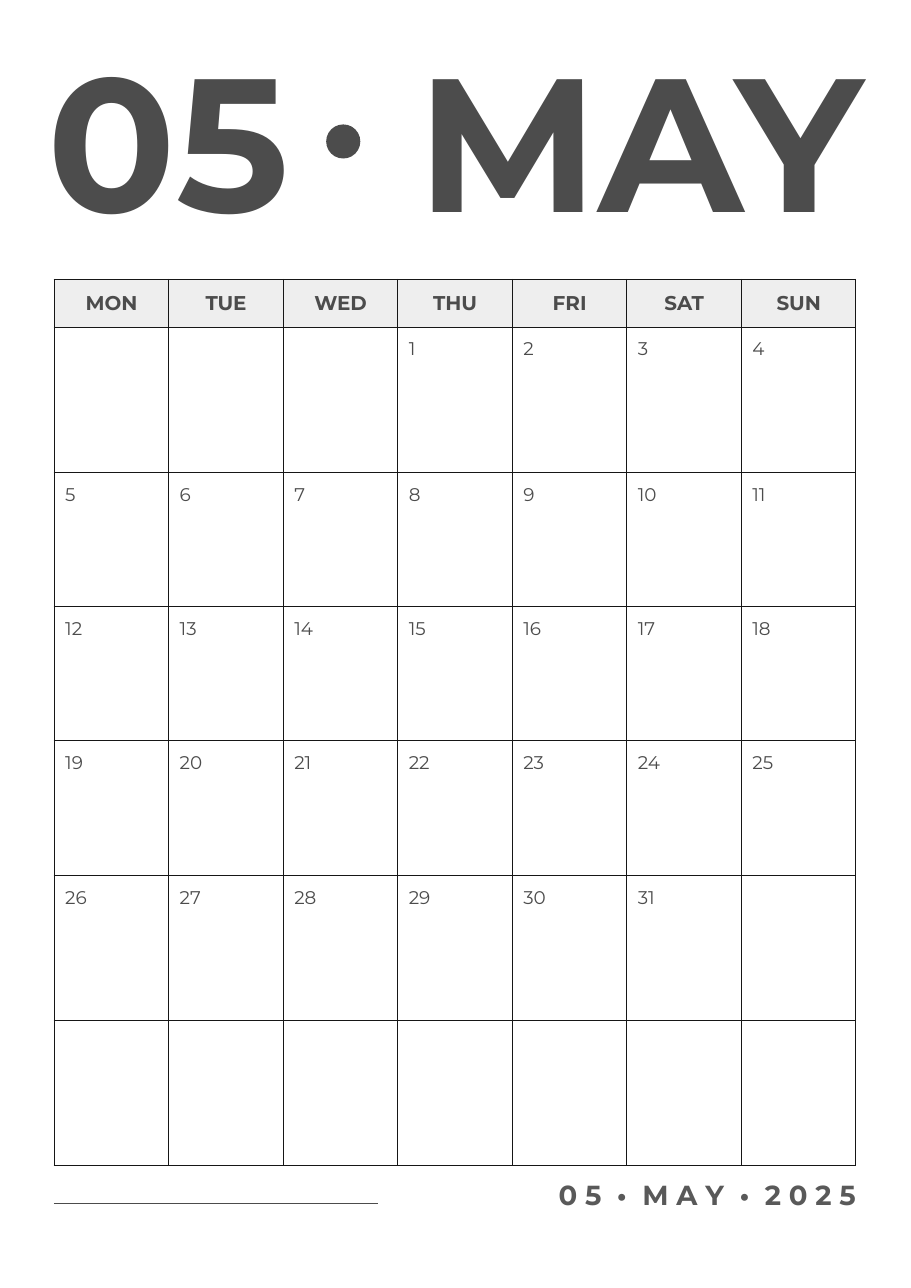
from lxml import etree
from pptx import Presentation
from pptx.dml.color import RGBColor
from pptx.enum import shapes, text
from pptx.oxml.ns import qn
from pptx.util import Pt

COLORS = {"ink": "4C4C4C", "stamp": "595959", "header": "EEEEEE", "paper": "FFFFFF", "grid": "161616"}
FONT = "Montserrat"
WEEKDAYS = ["MON", "TUE", "WED", "THU", "FRI", "SAT", "SUN"]
FIRST_COLUMN, DAY_COUNT, WEEK_COUNT = 3, 31, 6
HEADER_HEIGHT, DAY_HEIGHT, OPEN_DAY_HEIGHT, NOTE_HEIGHT = 31.3, 29.4, 34.2, 58.4
PADDING = 7.2


def color(name):
    """Return the named palette colour."""
    return RGBColor.from_string(COLORS[name])


def write(frame, words, size, bold=False, ink="ink", align=text.PP_ALIGN.LEFT):
    """Write one formatted paragraph into a text frame."""
    para = frame.paragraphs[0]
    para.alignment = align
    span = para.add_run()
    span.text = words
    span.font.name = FONT
    span.font.size = Pt(size)
    span.font.bold = bold
    span.font.color.rgb = color(ink)


def add_text(page, box, words, size, **style):
    """Add a text box without margins."""
    frame = page.shapes.add_textbox(*map(Pt, box)).text_frame
    frame.word_wrap = True
    frame.margin_left = frame.margin_top = frame.margin_right = frame.margin_bottom = 0
    write(frame, words, size, **style)


def set_borders(cell, sides):
    """Draw the listed cell sides and hide the others."""
    props = cell._tc.get_or_add_tcPr()
    for position, side in enumerate("LRTB"):
        line = etree.Element(qn(f"a:ln{side}"), w=str(Pt(0.75)))
        if side in sides:
            fill = etree.SubElement(line, qn("a:solidFill"))
            etree.SubElement(fill, qn("a:srgbClr"), val=COLORS["grid"])
        else:
            etree.SubElement(line, qn("a:noFill"))
        props.insert(position, line)


def format_cell(cell, fill, sides):
    """Set the fill, margins and borders of a cell."""
    cell.fill.solid()
    cell.fill.fore_color.rgb = color(fill)
    cell.margin_left = cell.margin_top = cell.margin_right = cell.margin_bottom = Pt(PADDING)
    set_borders(cell, sides)


def add_title(page, box):
    """Place the month number, dot and month name."""
    left, top, width, height = box
    add_text(page, (left, top, 193.7, height), "05", 124, bold=True)
    name_width = 312.5
    add_text(page, (left + width - name_width, top, name_width, height), "MAY", 124,
             bold=True, align=text.PP_ALIGN.RIGHT)
    dot = page.shapes.add_shape(shapes.MSO_SHAPE.OVAL, Pt(left + 182.2), Pt(top + 66.2), Pt(22.3), Pt(22.3))
    dot.shadow.inherit = False
    dot.fill.solid()
    dot.fill.fore_color.rgb = color("ink")
    dot.line.fill.background()


def add_calendar(page, box):
    """Place the month grid with a day row and a note row per week."""
    left, top, width, height = box
    columns = len(WEEKDAYS)
    grid = page.shapes.add_table(1 + 2 * WEEK_COUNT, columns, Pt(left), Pt(top), Pt(width), Pt(height)).table
    grid.first_row = grid.horz_banding = False
    for column in grid.columns:
        column.width = Pt(width / columns)

    grid.rows[0].height = Pt(HEADER_HEIGHT)
    for column, weekday in enumerate(WEEKDAYS):
        cell = grid.cell(0, column)
        format_cell(cell, "header", "LRTB")
        cell.vertical_anchor = text.MSO_ANCHOR.MIDDLE
        write(cell.text_frame, weekday, 13, bold=True, align=text.PP_ALIGN.CENTER)

    for week in range(WEEK_COUNT):
        first_day = week * columns - FIRST_COLUMN + 1
        days = range(first_day, first_day + columns)
        is_full = days[0] >= 1 and days[-1] <= DAY_COUNT
        day_row = 1 + 2 * week
        grid.rows[day_row].height = Pt(DAY_HEIGHT if is_full else OPEN_DAY_HEIGHT)
        grid.rows[day_row + 1].height = Pt(NOTE_HEIGHT)
        for column, day in enumerate(days):
            day_cell = grid.cell(day_row, column)
            format_cell(day_cell, "paper", "LRT")
            format_cell(grid.cell(day_row + 1, column), "paper", "LRB")
            if 1 <= day <= DAY_COUNT:
                write(day_cell.text_frame, str(day), 12)


def add_footer(page, box):
    """Place the writing line and the date stamp."""
    left, top, width, height = box
    line_y = Pt(top + 16.5)
    line = page.shapes.add_connector(shapes.MSO_CONNECTOR.STRAIGHT, Pt(left), line_y, Pt(left + 211.7), line_y)
    line.line.color.rgb = color("ink")
    line.line.width = Pt(0.75)
    etree.SubElement(line._element.spPr, qn("a:effectLst"))
    stamp_width = 286.6
    add_text(page, (left + width - stamp_width, top, stamp_width, height), "0 5  •  M A Y  •  2 0 2 5", 18,
             bold=True, ink="stamp", align=text.PP_ALIGN.RIGHT)


def main():
    """Build the calendar page."""
    deck = Presentation()
    deck.slide_width, deck.slide_height = Pt(595.44), Pt(841.68)
    page = deck.slides.add_slide(deck.slide_layouts[6])
    add_calendar(page, (35.4, 182.5, 524.2, 572.4))
    add_footer(page, (35.3, 769.7, 524.2, 21.6))
    add_title(page, (31, 15.1, 533.5, 150.5))
    deck.save("out.pptx")


if __name__ == "__main__":
    main()
